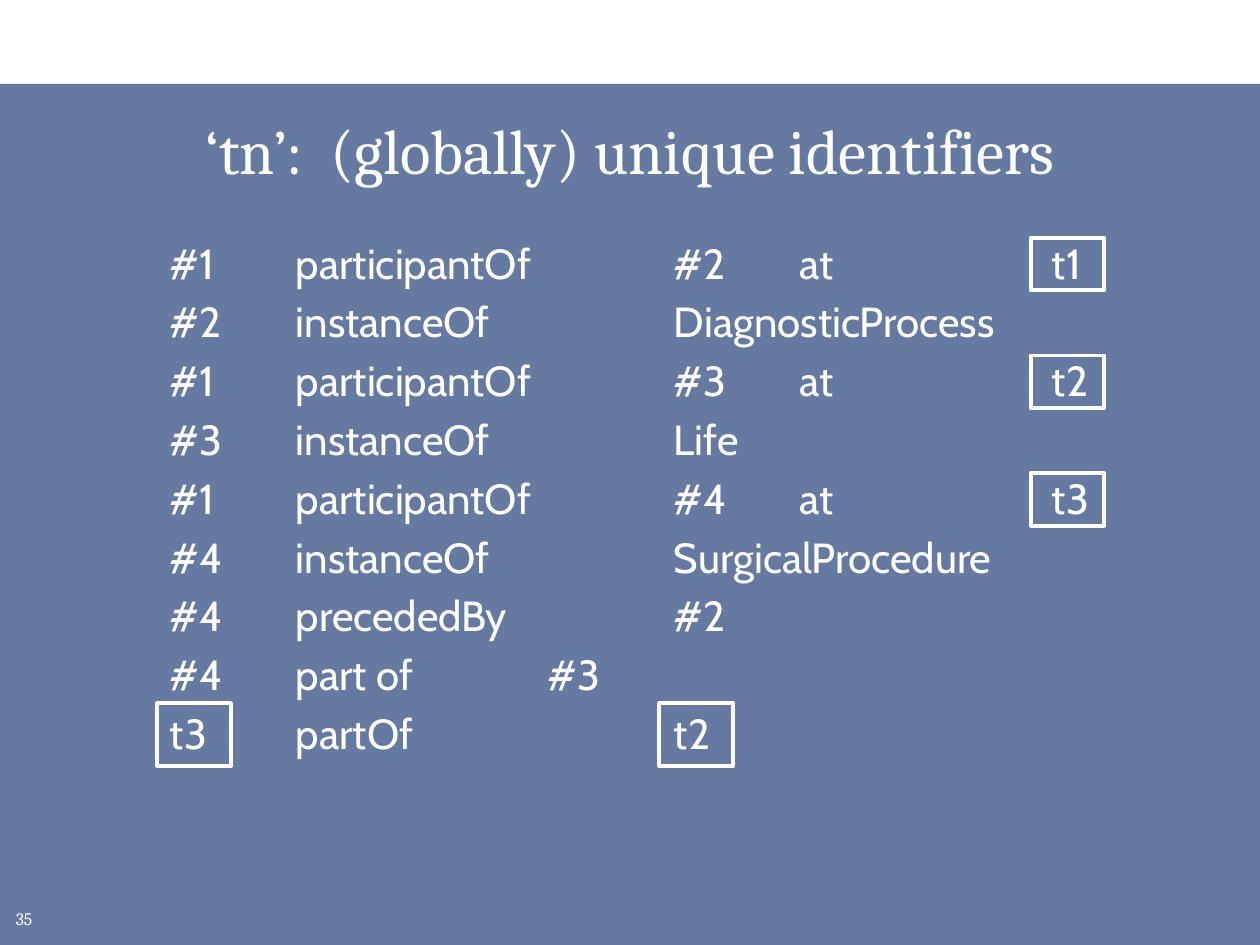
"""Build the slide on globally unique time identifiers."""
from dataclasses import dataclass

from pptx import Presentation
from pptx.dml.color import RGBColor
from pptx.enum import shapes, text
from pptx.oxml import ns
from pptx.util import Pt
from lxml import etree


@dataclass(frozen=True)
class Theme:
    ink: str = "FFFFFF"
    panel: str = "6679A0"
    serif: str = "Cambria"
    sans: str = "Cabin"
    head: int = 36
    body: int = 24
    note: int = 10
    line: float = 2.25
    gap: float = 4.8
    pitch: float = 33.6


class Deck:
    def __init__(self, theme):
        self.theme = theme
        self.prs = Presentation()
        self.prs.slide_width, self.prs.slide_height = Pt(720), Pt(540)
        self.slide = self.prs.slides.add_slide(self.prs.slide_layouts[6])

    def rect(self, x, y, w, h, fill=None, line=None):
        box = self.slide.shapes.add_shape(
            shapes.MSO_SHAPE.RECTANGLE, Pt(x), Pt(y), Pt(w), Pt(h))
        box.shadow.inherit = False
        if fill:
            box.fill.solid()
            box.fill.fore_color.rgb = RGBColor.from_string(fill)
        else:
            box.fill.background()
        if line:
            box.line.color.rgb = RGBColor.from_string(line)
            box.line.width = Pt(self.theme.line)
        else:
            box.line.fill.background()

    def mark(self, x, row, h):
        mid = 151 + row * self.theme.pitch
        self.rect(x, mid - h / 2, 42, h, line=self.theme.ink)

    def text(self, x, y, w, h, lines, size, face, align="LEFT", anchor="TOP"):
        box = self.slide.shapes.add_textbox(Pt(x), Pt(y), Pt(w), Pt(h))
        frame = box.text_frame
        frame.word_wrap = True
        frame.vertical_anchor = text.MSO_ANCHOR[anchor]
        frame.text = "\n".join(lines)
        for i, para in enumerate(frame.paragraphs):
            para.alignment = text.PP_ALIGN[align]
            if i:
                para.space_before = Pt(self.theme.gap)
            for run in para.runs:
                run.font.size = Pt(size)
                run.font.name = face
                run.font.color.rgb = RGBColor.from_string(self.theme.ink)
        return frame

    def rows(self, x, y, w, h, rows):
        lines = ["".join("\t" + word for word in words) for _, words in rows]
        frame = self.text(x, y, w, h, lines, self.theme.body, self.theme.sans)
        for para, (stops, _) in zip(frame.paragraphs, rows):
            tabs = etree.SubElement(
                para._p.get_or_add_pPr(), ns.qn("a:tabLst"))
            for stop in stops:
                etree.SubElement(tabs, ns.qn("a:tab"),
                                 pos=str(Pt(stop)), algn="l")


def main():
    theme = Theme()
    deck = Deck(theme)
    deck.rect(0, 48, 720, 492, fill=theme.panel)
    deck.text(2, 516, 28, 18, ["35"], theme.note, theme.serif,
              anchor="MIDDLE")
    deck.text(18, 60, 684, 60, ["‘tn’:  (globally) unique identifiers"],
              theme.head, theme.serif, "CENTER")

    for row in (0, 2, 4):
        deck.mark(589, row, 30)
    for x in (90, 376.8):
        deck.mark(x, 8, 36)

    wide = (72, 144, 360, 432, 576)
    near = (72, 144, 288)
    deck.rows(18, 132, 696, 216, [
        (wide, ("#1", "participantOf", "#2", "at", "t1")),
        (wide, ("#2", "instanceOf", "DiagnosticProcess")),
        (wide, ("#1", "participantOf", "#3", "at", "t2")),
        (wide, ("#3", "instanceOf", "Life")),
        (wide, ("#1", "participantOf", "#4", "at", "t3")),
        (wide, ("#4", "instanceOf", "SurgicalProcedure")),
        (wide, ("#4", "precededBy", "#2")),
        (near, ("#4", "part of", "#3")),
        (wide, ("t3", "partOf", "t2")),
    ])
    deck.prs.save("out.pptx")


if __name__ == "__main__":
    main()
